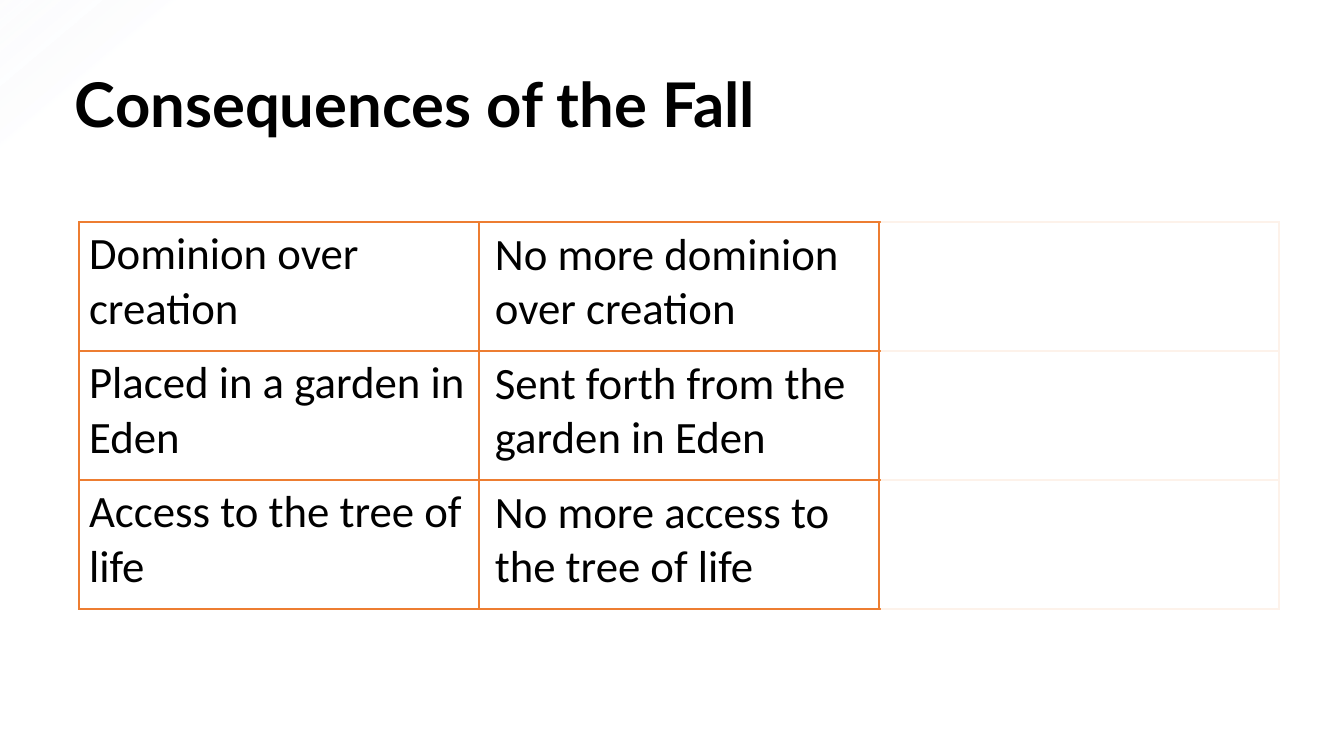
from typing import NamedTuple

from lxml import etree
from pptx import Presentation
from pptx.dml import color
from pptx.enum import shapes, text
from pptx.oxml import ns
from pptx.util import Emu, Pt

EMU_PER_PX = 914400 / 100.8
BLACK, WHITE, ORANGE = "000000", "FFFFFF", "ED7D31"
TABLE_LEFT, TABLE_TOP = 79, 222
COLUMN_WIDTH, ROW_HEIGHT, COLUMNS = 400, 129, 3


class Box(NamedTuple):
    left: int
    top: int
    width: int
    height: int


class Consequence(NamedTuple):
    before: str
    after: str


class Stop(NamedTuple):
    percent: int
    colour: str
    opacity: int


CONSEQUENCES = [
    Consequence("Dominion over creation", "No more dominion over creation"),
    Consequence("Placed in a garden in Eden", "Sent forth from the garden in Eden"),
    Consequence("Access to the tree of life", "No more access to the tree of life"),
]
GLOW_STOPS = [
    Stop(29, "F6F8FC", 25),
    Stop(45, WHITE, 70),
    Stop(50, WHITE, 85),
    Stop(63, WHITE, 100),
]


def px(length: int) -> Emu:
    return Emu(round(length * EMU_PER_PX))


def place(box: Box) -> list[Emu]:
    return [px(length) for length in box]


def rgb(colour: str) -> color.RGBColor:
    return color.RGBColor.from_string(colour)


def child(parent, tag: str, **attributes):
    return etree.SubElement(parent, ns.qn(tag), attributes)


def add_colour(parent, colour: str, opacity: int = 100) -> None:
    srgb = child(parent, "a:srgbClr", val=colour)
    if opacity < 100:
        child(srgb, "a:alpha", val=str(opacity * 1000))


def write(frame, words: str, *, size: int = 32, font: str = "Calibri",
          bold: bool = False, spacing: float = 1.0,
          anchor=text.MSO_ANCHOR.TOP) -> None:
    frame.word_wrap = True
    frame.vertical_anchor = anchor
    paragraph = frame.paragraphs[0]
    paragraph.line_spacing = spacing
    run = paragraph.add_run()
    run.text = words
    run.font.size = Pt(size)
    run.font.name = font
    run.font.bold = bold
    run.font.color.rgb = rgb(BLACK)


def add_rectangle(slide, box: Box):
    rectangle = slide.shapes.add_shape(shapes.MSO_SHAPE.RECTANGLE, *place(box))
    rectangle.shadow.inherit = False
    rectangle.line.fill.background()
    return rectangle


def add_glow(slide, box: Box) -> None:
    glow = add_rectangle(slide, box)
    glow.fill.gradient()
    glow.fill.gradient_angle = 0
    gradient = glow.fill._xPr.find(ns.qn("a:gradFill"))
    gradient.find(ns.qn("a:lin")).set("ang", str(50 * 60000))
    stops = gradient.find(ns.qn("a:gsLst"))
    for old in list(stops):
        stops.remove(old)
    for stop in GLOW_STOPS:
        position = child(stops, "a:gs", pos=str(stop.percent * 1000))
        add_colour(position, stop.colour, stop.opacity)


def add_veil(slide, box: Box) -> None:
    veil = add_rectangle(slide, box)
    veil.fill.solid()
    veil.fill.fore_color.rgb = rgb(WHITE)
    srgb = veil.fill._xPr.find(".//" + ns.qn("a:srgbClr"))
    child(srgb, "a:alpha", val="90000")


def set_borders(cell) -> None:
    properties = cell._tc.get_or_add_tcPr()
    for index, side in enumerate(("a:lnL", "a:lnR", "a:lnT", "a:lnB")):
        border = etree.Element(ns.qn(side), w=str(Pt(1)))
        add_colour(child(border, "a:solidFill"), ORANGE)
        properties.insert(index, border)


def add_consequences(slide) -> None:
    box = Box(TABLE_LEFT, TABLE_TOP, COLUMN_WIDTH * COLUMNS,
              ROW_HEIGHT * len(CONSEQUENCES))
    table = slide.shapes.add_table(len(CONSEQUENCES), COLUMNS, *place(box)).table
    table.first_row = False
    table.horz_banding = False
    for column in table.columns:
        column.width = px(COLUMN_WIDTH)
    for row, consequence in zip(table.rows, CONSEQUENCES):
        row.height = px(ROW_HEIGHT)
        for cell in row.cells:
            cell.fill.background()
            set_borders(cell)
        write(row.cells[0].text_frame, consequence.before)


def main() -> None:
    deck = Presentation()
    deck.slide_width, deck.slide_height = px(1344), px(756)
    slide = deck.slides.add_slide(deck.slide_layouts[6])
    add_glow(slide, Box(-185, -122, 627, 434))
    title = slide.shapes.add_textbox(*place(Box(65, 35, 1216, 146)))
    write(title.text_frame, "Consequences of the Fall", size=44, font="Lato",
          bold=True, spacing=0.9, anchor=text.MSO_ANCHOR.MIDDLE)
    add_consequences(slide)
    add_veil(slide, Box(881, 181, 416, 460))
    for index, consequence in enumerate(CONSEQUENCES):
        box = Box(485, TABLE_TOP - 1 + index * ROW_HEIGHT, 374, 119)
        after = slide.shapes.add_textbox(*place(box))
        write(after.text_frame, consequence.after)
        after.text_frame.auto_size = text.MSO_AUTO_SIZE.SHAPE_TO_FIT_TEXT
    deck.save("out.pptx")


if __name__ == "__main__":
    main()
